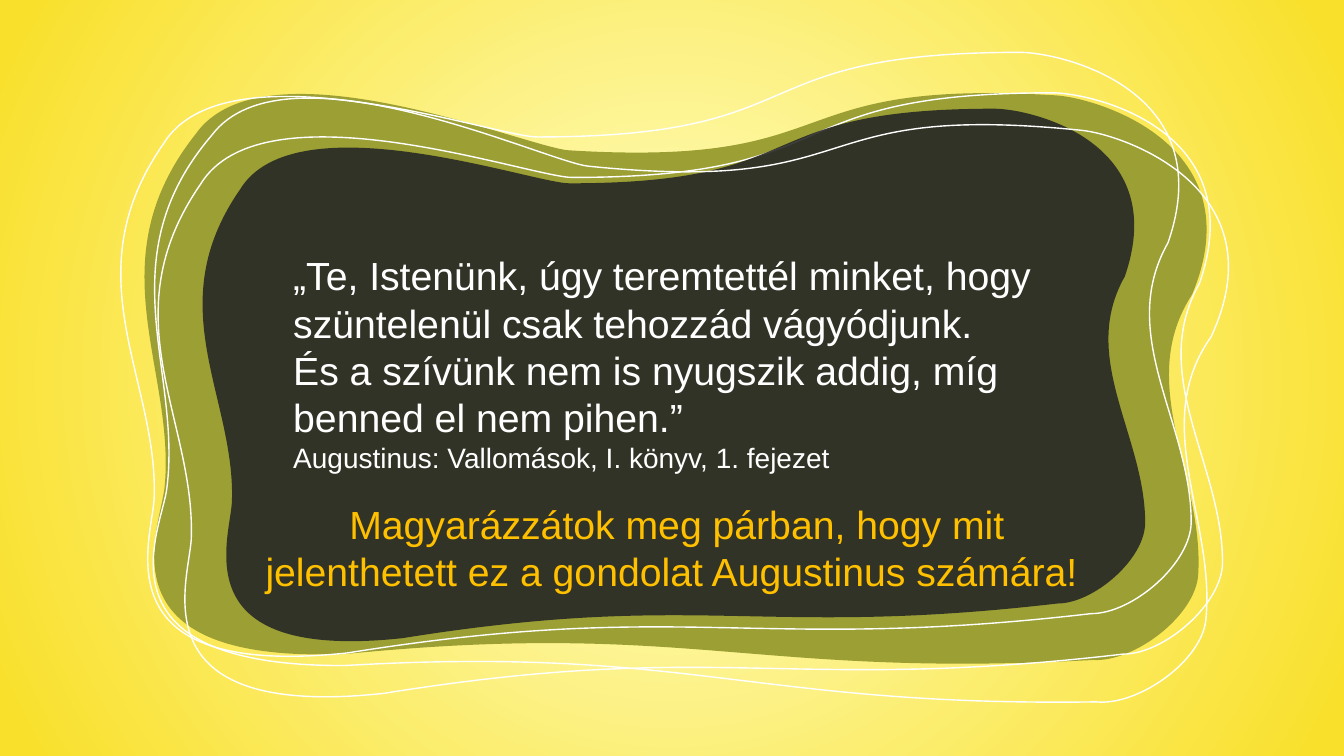
"""Build a slide with a quotation on layered wavy blobs over a yellow glow."""
from lxml import etree
from pptx import Presentation
from pptx import util as u
from pptx.dml import color
from pptx.enum import text
from pptx.oxml import ns

BLOB_WIDTH, BLOB_HEIGHT = 1062, 599
BLOB_START = (42, 91)
BLOB_CURVES = [
    [(104, -11), (372, 84), (413, 84)],
    [(696, 84), (609, 0), (892, 0)],
    [(933, 0), (1092, 37), (1039, 189)],
    [(987, 281), (1062, 368), (1062, 466)],
    [(1062, 507), (1004, 557), (963, 557)],
    [(626, 596), (562, 542), (225, 596)],
    [(-28, 623), (33, 480), (33, 440)],
    [(36, 323), (-49, 222), (42, 91)],
]


def rgb(code):
    return color.RGBColor.from_string(code)


def add_text(page, lines, left, top, width, height, ink="FFFFFF", align=text.PP_ALIGN.LEFT):
    box = page.shapes.add_textbox(u.Cm(left), u.Cm(top), u.Cm(width), u.Cm(height))
    frame = box.text_frame
    frame.word_wrap = True
    frame.auto_size = text.MSO_AUTO_SIZE.SHAPE_TO_FIT_TEXT
    for index, (words, size) in enumerate(lines):
        para = frame.add_paragraph() if index else frame.paragraphs[0]
        para.alignment = align
        span = para.add_run()
        span.text = words
        span.font.name = "Arial"
        span.font.size = u.Pt(size)
        span.font.color.rgb = rgb(ink)


deck = Presentation()
deck.slide_width, deck.slide_height = u.Cm(33.87), u.Cm(19.05)
page = deck.slides.add_slide(deck.slide_layouts[6])

glow = page.background.fill
glow.gradient()
for stop, code, position in zip(glow.gradient_stops, ["FFFFCC", "F9E02B"], [0, 0.97]):
    stop.color.rgb = rgb(code)
    stop.position = position
gradient = page.element.xpath(".//a:gradFill")[0]
for linear in gradient.findall(ns.qn("a:lin")):
    gradient.remove(linear)
circle = etree.SubElement(gradient, ns.qn("a:path"), path="circle")
etree.SubElement(circle, ns.qn("a:fillToRect"), l="50000", t="50000", r="50000", b="50000")

blobs = [
    (3.51, 1.83, 26.97, 15.21, 3.5, "9C9F33", None),
    (3.05, 1.32, 26.97, 15.21, 0, None, None),
    (3.99, 2.34, 26.82, 15.21, 0, None, None),
    (5.11, 2.74, 23.75, 13.41, 0, "262626", 89),
    (3.66, 2.31, 27.23, 15.37, 5.8, None, None),
]
texts = [
    ([("„Te, Istenünk, úgy teremtettél minket, hogy szüntelenül csak tehozzád vágyódjunk.", 28),
      ("És a szívünk nem is nyugszik addig, míg benned el nem pihen.”", 28),
      ("Augustinus: Vallomások, I. könyv, 1. fejezet", 20)],
     7.14, 6.22, 20.75, 6.07, "FFFFFF", text.PP_ALIGN.LEFT),
    ([("Magyarázzátok meg párban, hogy mit jelenthetett ez a gondolat Augustinus számára! ", 28)],
     6.22, 12.47, 21.67, 2.64, "FFC000", text.PP_ALIGN.CENTER),
]

for index, (left, top, width, height, angle, fill, opacity) in enumerate(blobs):
    if index == len(blobs) - 1:
        for block in texts:
            add_text(page, *block)
    builder = page.shapes.build_freeform(0, 0, scale=u.Cm(0.0254))
    builder.add_line_segments([(BLOB_WIDTH, 0), (BLOB_WIDTH, BLOB_HEIGHT), (0, BLOB_HEIGHT)])
    blob = builder.convert_to_shape()
    blob.left, blob.top, blob.width, blob.height = map(u.Cm, (left, top, width, height))
    blob.rotation = angle
    blob.shadow.inherit = False

    outline = blob.element.xpath(".//a:path")[0]
    for segment in list(outline):
        outline.remove(segment)
    for tag, points in [("a:moveTo", [BLOB_START])] + [("a:cubicBezTo", c) for c in BLOB_CURVES]:
        segment = etree.SubElement(outline, ns.qn(tag))
        for x, y in points:
            etree.SubElement(segment, ns.qn("a:pt"), x=str(x), y=str(y))
    etree.SubElement(outline, ns.qn("a:close"))

    if fill:
        blob.fill.solid()
        blob.fill.fore_color.rgb = rgb(fill)
        blob.line.fill.background()
    else:
        blob.fill.background()
        blob.line.color.rgb = rgb("FFFFFF")
        blob.line.width = u.Pt(1)
    if opacity:
        paint = blob.element.xpath("./p:spPr/a:solidFill/a:srgbClr")[0]
        etree.SubElement(paint, ns.qn("a:alpha"), val=str(opacity * 1000))

deck.save("out.pptx")
